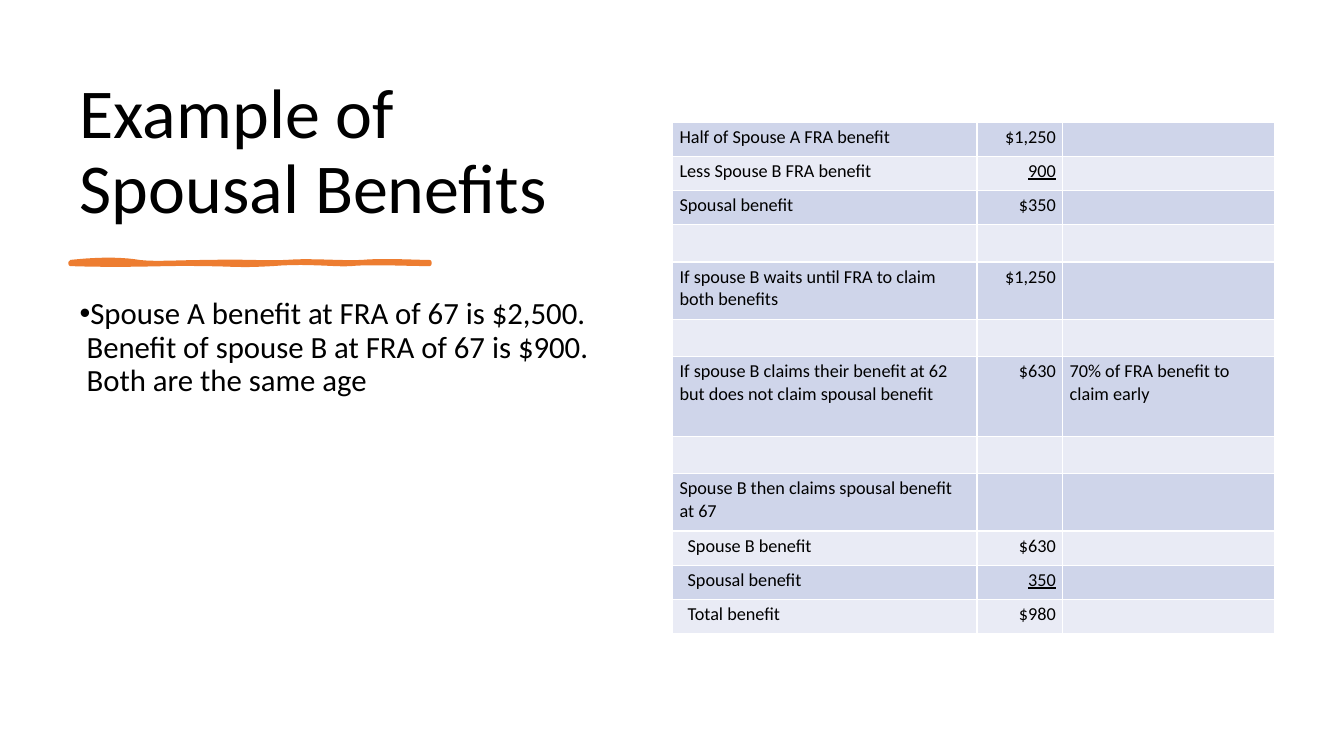
from dataclasses import dataclass

from lxml import etree
from pptx import Presentation
from pptx.dml.color import RGBColor
from pptx.enum import text
from pptx.oxml import ns
from pptx.util import Inches, Pt


@dataclass(frozen=True)
class Theme:
    font: str = "Calibri"
    ink: str = "000000"
    accent: str = "ED7D31"
    border: str = "FFFFFF"
    bands: tuple = ("CFD5EA", "E9EBF5")
    title: int = 50
    body: int = 22
    cell: int = 13


theme = Theme()


def add_run(p, words, size, underline=None):
    r = p.add_run()
    r.text = words
    r.font.name = theme.font
    r.font.size = Pt(size)
    r.font.color.rgb = RGBColor.from_string(theme.ink)
    r.font.underline = underline


def curve_points(start, curves, steps=10):
    """Sample a chain of cubic Bézier curves, given in inches, as points in EMU."""
    points = [start]
    for c1, c2, end in curves:
        for t in (i / steps for i in range(1, steps + 1)):
            weights = ((1 - t) ** 3, 3 * t * (1 - t) ** 2, 3 * t * t * (1 - t), t ** 3)
            points.append(tuple(sum(w * q[axis] for w, q in zip(weights, (start, c1, c2, end)))
                                for axis in (0, 1)))
        start = end
    return [(Inches(x), Inches(y)) for x, y in points]


prs = Presentation()
prs.slide_width, prs.slide_height = Inches(13.33), Inches(7.5)
s = prs.slides.add_slide(prs.slide_layouts[1])

# Title and body
title, body = s.placeholders
blocks = (
    (title, 0.7, 1.62, text.MSO_ANCHOR.BOTTOM, theme.title, 0, "Example of Spousal Benefits"),
    (body, 2.91, 3.88, text.MSO_ANCHOR.TOP, theme.body, 6,
     "Spouse A benefit at FRA of 67 is $2,500.  Benefit of spouse B at FRA of 67 is $900.  "
     "Both are the same age"),
)
for sp, top, height, anchor, size, after, words in blocks:
    sp.left, sp.top, sp.width, sp.height = map(Inches, (0.69, top, 5.27, height))
    tf = sp.text_frame
    tf.word_wrap = True
    tf.auto_size = text.MSO_AUTO_SIZE.NONE
    tf.vertical_anchor = anchor
    p = tf.paragraphs[0]
    p.alignment = text.PP_ALIGN.LEFT
    p.line_spacing = 0.9
    p.space_before, p.space_after = Pt(0), Pt(after)
    add_run(p, words, size)

pPr = body.text_frame.paragraphs[0]._p.get_or_add_pPr()
pPr.set("marL", "0")
pPr.set("indent", str(-Inches(0.25)))
etree.SubElement(pPr, ns.qn("a:buFont")).set("typeface", "Arial")
etree.SubElement(pPr, ns.qn("a:buChar")).set("char", "•")

# Hand-drawn rule under the title
stroke = curve_points((0.7, 2.6), (
    ((0.97, 2.57), (1.21, 2.57), (1.38, 2.6)),
    ((1.55, 2.62), (1.77, 2.6), (2.09, 2.6)),
    ((2.41, 2.59), (2.6, 2.61), (2.84, 2.6)),
    ((3.08, 2.58), (3.39, 2.61), (3.59, 2.6)),
    ((3.79, 2.58), (4.12, 2.6), (4.26, 2.6)),
    ((4.26, 2.6), (4.26, 2.61), (4.26, 2.62)),
    ((4.08, 2.62), (3.64, 2.6), (3.48, 2.62)),
    ((3.32, 2.63), (3.04, 2.59), (2.7, 2.62)),
    ((2.35, 2.64), (2.31, 2.62), (1.99, 2.62)),
    ((1.66, 2.61), (1.32, 2.64), (0.7, 2.62)),
))
pen = s.shapes.build_freeform(*stroke[0])
pen.add_line_segments(stroke[1:], close=True)
rule = pen.convert_to_shape()
rule.shadow.inherit = False
rule.fill.solid()
rule.fill.fore_color.rgb = rule.line.color.rgb = RGBColor.from_string(theme.accent)
rule.line.width = Pt(3)

# Benefit table: label, amount, note, row height
SINGLE, GAP, DOUBLE, TALL = 0.34, 0.37, 0.57, 0.79
rows = (
    ("Half of Spouse A FRA benefit", "$1,250", "", SINGLE),
    ("Less Spouse B FRA benefit", "900", "", SINGLE),
    ("Spousal benefit", "$350", "", SINGLE),
    ("", "", "", GAP),
    ("If spouse B waits until FRA to claim both benefits", "$1,250", "", DOUBLE),
    ("", "", "", GAP),
    ("If spouse B claims their benefit at 62 but does not claim spousal benefit", "$630",
     "70% of FRA benefit to claim early", TALL),
    ("", "", "", GAP),
    ("Spouse B then claims spousal benefit at 67", "", "", DOUBLE),
    ("Spouse B benefit", "$630", "", SINGLE),
    ("Spousal benefit", "350", "", SINGLE),
    ("Total benefit", "$980", "", SINGLE),
)
subtracted_or_added = (1, 10)
first_indented = 9
widths = (3.02, 0.85, 2.1)
frame = s.shapes.add_table(len(rows), len(widths), Inches(6.67), Inches(1.21),
                           Inches(sum(widths)), Inches(sum(row[-1] for row in rows)))
table = frame.table
table.first_row = table.horz_banding = False
for column, width in zip(table.columns, widths):
    column.width = Inches(width)

for i, (*cells, height) in enumerate(rows):
    table.rows[i].height = Inches(height)
    for j, words in enumerate(cells):
        cell = table.cell(i, j)
        indent = 0.08 if j == 0 and i >= first_indented else 0
        cell.margin_left, cell.margin_right = Inches(0.07 + indent), Inches(0.07)
        cell.margin_top = cell.margin_bottom = Inches(0.04)
        for side in ("lnL", "lnR", "lnT", "lnB"):
            ln = etree.SubElement(cell._tc.get_or_add_tcPr(), ns.qn(f"a:{side}"), w=str(Pt(1)))
            fill = etree.SubElement(ln, ns.qn("a:solidFill"))
            etree.SubElement(fill, ns.qn("a:srgbClr"), val=theme.border)
        cell.fill.solid()
        cell.fill.fore_color.rgb = RGBColor.from_string(theme.bands[i % 2])
        p = cell.text_frame.paragraphs[0]
        if j == 1:
            p.alignment = text.PP_ALIGN.RIGHT
        if words:
            add_run(p, words, theme.cell, underline=j == 1 and i in subtracted_or_added)
        else:
            etree.SubElement(p._p, ns.qn("a:endParaRPr"), sz=str(theme.cell * 100))

prs.save("out.pptx")
